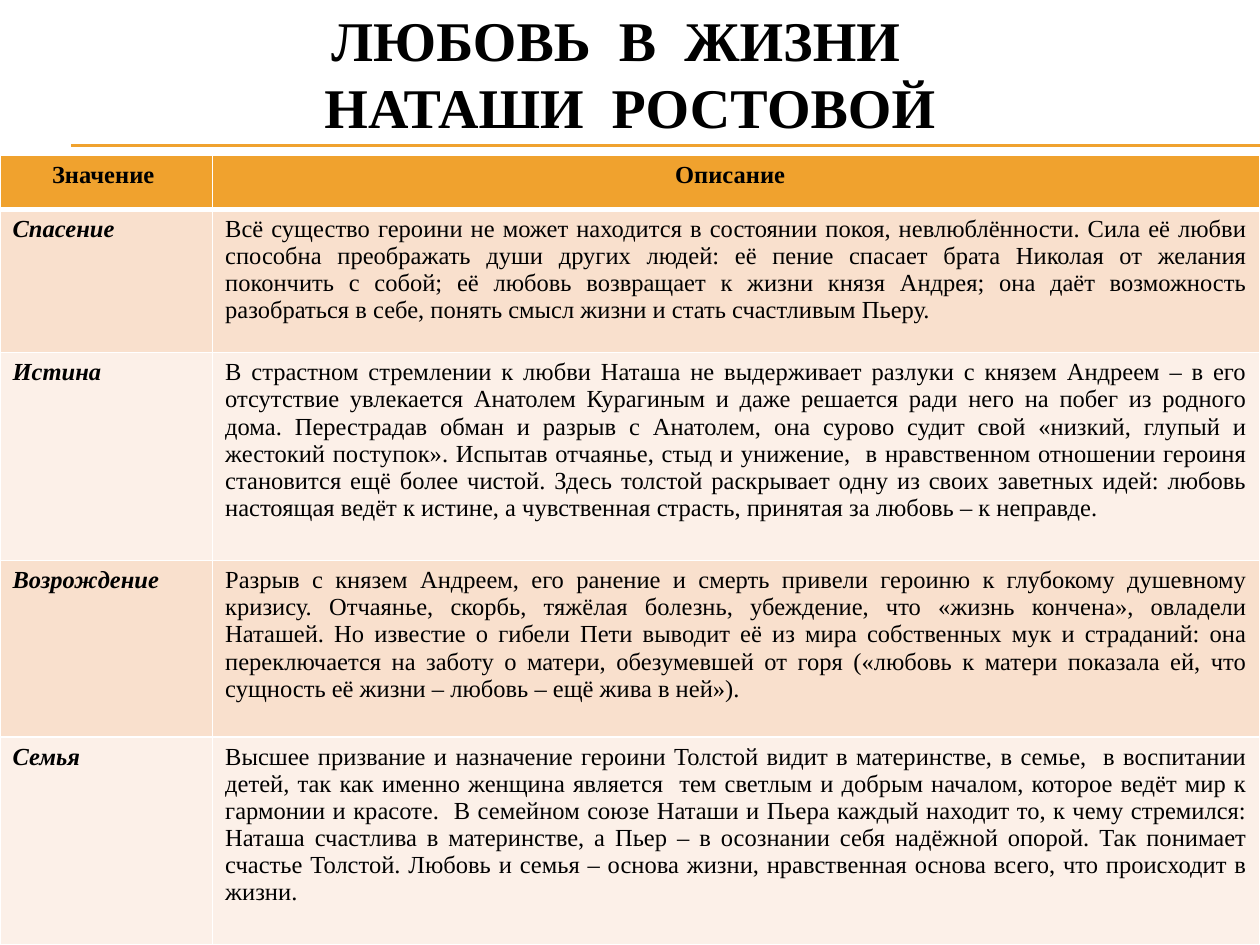
from pptx import Presentation
from pptx.dml.color import RGBColor
from pptx.enum.shapes import MSO_CONNECTOR
from pptx.enum.text import MSO_ANCHOR, MSO_AUTO_SIZE, PP_ALIGN
from pptx.oxml import parse_xml
from pptx.oxml.ns import nsdecls
from pptx.util import Pt

FONT = "Times New Roman"
BLACK = RGBColor(0x00, 0x00, 0x00)
WHITE = RGBColor(0xFF, 0xFF, 0xFF)
ORANGE = RGBColor(0xF0, 0xA2, 0x2E)
BANDS = [RGBColor(0xF9, 0xE0, 0xCD), RGBColor(0xFC, 0xF0, 0xE8)]

ROWS = [
    ("Значение ", "Описание  "),
    ("Спасение ",
     "Всё существо героини не может находится в состоянии покоя, невлюблённости. "
     "Сила её любви способна преображать души других людей: её пение спасает брата "
     "Николая от желания покончить с собой; её любовь возвращает к жизни князя Андрея; "
     "она даёт возможность разобраться в себе, понять смысл жизни и стать счастливым Пьеру."),
    ("Истина ",
     "В страстном стремлении к любви Наташа не выдерживает разлуки с князем Андреем – "
     "в его отсутствие увлекается Анатолем Курагиным и даже решается ради него на побег "
     "из родного дома. Перестрадав обман и разрыв с Анатолем, она сурово судит свой "
     "«низкий, глупый и жестокий поступок». Испытав отчаянье, стыд и унижение,  "
     "в нравственном отношении героиня становится ещё более чистой. Здесь толстой "
     "раскрывает одну из своих заветных идей: любовь настоящая ведёт к истине, "
     "а чувственная страсть, принятая за любовь – к неправде."),
    ("Возрождение ",
     "Разрыв с князем Андреем, его ранение и смерть привели героиню к глубокому "
     "душевному кризису. Отчаянье, скорбь, тяжёлая болезнь, убеждение, что «жизнь "
     "кончена», овладели Наташей. Но известие о гибели Пети выводит её из мира "
     "собственных мук и страданий: она переключается на заботу о матери, обезумевшей "
     "от горя («любовь к матери показала ей, что сущность её жизни – любовь – ещё жива в ней»)."),
    ("Семья ",
     "Высшее призвание и назначение героини Толстой видит в материнстве, в семье,  "
     "в воспитании детей, так как именно женщина является  тем светлым и добрым началом, "
     "которое ведёт мир к гармонии и красоте.  В семейном союзе Наташи и Пьера каждый "
     "находит то, к чему стремился: Наташа счастлива в материнстве, а Пьер – в осознании "
     "себя надёжной опорой. Так понимает счастье Толстой. Любовь и семья – основа жизни, "
     "нравственная основа всего, что происходит в жизни."),
]
COLUMN_WIDTHS = [121.5, 598.5]
ROW_HEIGHTS = [31, 82, 118.8, 100.8, 118.8]


def add_span(para, text, size, bold, italic=False):
    span = para.add_run()
    span.text = text
    span.font.name = FONT
    span.font.size = Pt(size)
    span.font.bold = bold
    span.font.italic = italic
    span.font.color.rgb = BLACK


def add_border(cell, side, width):
    cell._tc.get_or_add_tcPr().append(parse_xml(
        f'<a:{side} {nsdecls("a")} w="{Pt(width)}"><a:solidFill>'
        f'<a:srgbClr val="{WHITE}"/></a:solidFill></a:{side}>'))


deck = Presentation()
deck.slide_width, deck.slide_height = Pt(720), Pt(540)
page = deck.slides.add_slide(deck.slide_layouts[5])
page.background.fill.solid()
page.background.fill.fore_color.rgb = WHITE

# Double rule under the title
for y in (82.8, 83.5):
    rule = page.shapes.add_connector(MSO_CONNECTOR.STRAIGHT, Pt(40.5), Pt(y), Pt(720), Pt(y))
    rule.line.color.rgb = ORANGE
    rule.line.width = Pt(0.75)
    rule._element.spPr.append(parse_xml(f'<a:effectLst {nsdecls("a")}/>'))

# Title
title = page.shapes.title
title.left, title.top, title.width, title.height = Pt(36.7), Pt(0), Pt(646.6), Pt(82.8)
title.text_frame.word_wrap = True
title.text_frame.auto_size = MSO_AUTO_SIZE.NONE
title.text_frame.vertical_anchor = MSO_ANCHOR.MIDDLE
para = title.text_frame.paragraphs[0]
para.alignment = PP_ALIGN.CENTER
add_span(para, "ЛЮБОВЬ  В  ЖИЗНИ  ", 32, True)
para.add_line_break()
add_span(para, "НАТАШИ  РОСТОВОЙ", 32, True)

# Table
table = page.shapes.add_table(len(ROWS), len(COLUMN_WIDTHS), Pt(0), Pt(88.6),
                              Pt(sum(COLUMN_WIDTHS)), Pt(sum(ROW_HEIGHTS))).table
for column, width in zip(table.columns, COLUMN_WIDTHS):
    column.width = Pt(width)
for row, height in zip(table.rows, ROW_HEIGHTS):
    row.height = Pt(height)

for r, texts in enumerate(ROWS):
    header = r == 0
    for c, text in enumerate(texts):
        cell = table.cell(r, c)
        for side in ("lnL", "lnR", "lnT", "lnB"):
            thick = (header and side == "lnB") or (r == 1 and side == "lnT")
            add_border(cell, side, 3 if thick else 1)
        cell.fill.solid()
        cell.fill.fore_color.rgb = ORANGE if header else BANDS[(r - 1) % 2]
        para = cell.text_frame.paragraphs[0]
        para.alignment = PP_ALIGN.CENTER if header else PP_ALIGN.JUSTIFY
        add_span(para, text, 14, header or c == 0, not header and c == 0)

deck.save("out.pptx")
